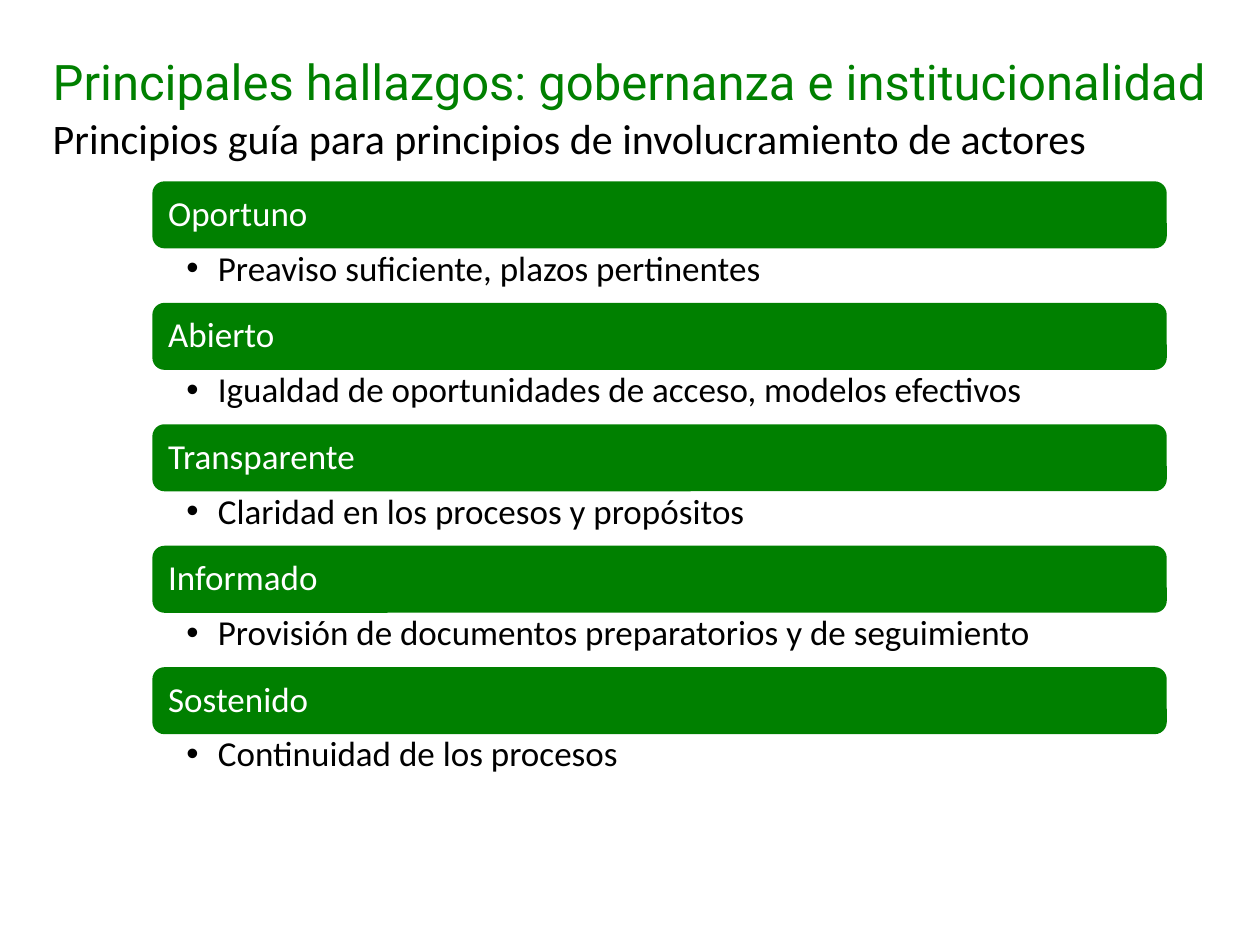
from dataclasses import dataclass
from pptx import Presentation as Deck
from pptx.dml.color import RGBColor as Rgb
from pptx.enum.shapes import MSO_SHAPE as Kind
from pptx.enum.text import MSO_ANCHOR as Anchor, MSO_AUTO_SIZE as Fit, PP_ALIGN as Align
from pptx.oxml.ns import qn
from pptx.util import Inches, Pt
from lxml.etree import SubElement as Sub


@dataclass(frozen=True)
class Theme:
    green: Rgb = Rgb(0, 128, 0)
    black: Rgb = Rgb(0, 0, 0)
    white: Rgb = Rgb(255, 255, 255)
    head: Pt = Pt(28)
    lead: Pt = Pt(24)
    body: Pt = Pt(20)
    edge: Pt = Pt(1.5)
    sans: str = "Calibri"
    show: str = "Roboto"


THEME = Theme()
WIDE, HIGH = 10, 7.5
TITLE = "Principales hallazgos: gobernanza e institucionalidad"
LEAD = "Principios guía para principios de involucramiento de actores"
ITEMS = [
    ("Oportuno", "Preaviso suficiente, plazos pertinentes"),
    ("Abierto", "Igualdad de oportunidades de acceso, modelos efectivos"),
    ("Transparente", "Claridad en los procesos y propósitos"),
    ("Informado", "Provisión de documentos preparatorios y de seguimiento"),
    ("Sostenido", "Continuidad de los procesos"),
]


def apply(obj, form):
    for key, val in form.items():
        setattr(obj, key, val)


def pads(left, top, right, low):
    keys = ("margin_left", "margin_top", "margin_right", "margin_bottom")
    return dict(zip(keys, map(Inches, (left, top, right, low))))


def write(shape, text, font, color, frame, para, dot=False):
    body = shape.text_frame
    apply(body, {"word_wrap": True, **frame})
    line = body.paragraphs[0]
    apply(line, {"alignment": Align.LEFT, **para})
    if dot:
        prop = line._p.get_or_add_pPr()
        prop.set("marL", str(Inches(0.25)))
        prop.set("indent", str(-Inches(0.25)))
        Sub(prop, qn("a:buFont")).set("typeface", "Arial")
        Sub(prop, qn("a:buChar")).set("char", "•")
    run = line.add_run()
    run.text = text
    apply(run.font, font)
    run.font.color.rgb = color


def header(slide, box):
    left, top, wide, high = box
    rows = [
        (TITLE, 0, 0.68, THEME.head, THEME.show, THEME.green, Fit.NONE),
        (LEAD, 0.49, 0.51, THEME.lead, THEME.sans, THEME.black, Fit.SHAPE_TO_FIT_TEXT),
    ]
    for text, start, share, size, name, color, fit in rows:
        area = map(Inches, (left, top + start * high, wide, share * high))
        part = slide.shapes.add_textbox(*area)
        write(part, text, {"size": size, "name": name}, color, {"auto_size": fit}, {})


def band(shapes, box, text):
    bar = shapes.add_shape(Kind.ROUNDED_RECTANGLE, *map(Inches, box))
    bar.shadow.inherit = False
    bar.fill.solid()
    bar.fill.fore_color.rgb = THEME.green
    bar.line.color.rgb = THEME.green
    bar.line.width = THEME.edge
    frame = {"vertical_anchor": Anchor.MIDDLE, **pads(0.09, 0.08, 0.08, 0.08)}
    write(bar, text, {"size": THEME.body, "name": THEME.sans}, THEME.white,
          frame, {"line_spacing": 0.9})


def detail(shapes, box, text):
    note = shapes.add_textbox(*map(Inches, box))
    write(note, text, {"size": THEME.body, "name": THEME.sans}, THEME.black,
          pads(0.26, 0.03, 0.19, 0.03), {"level": 1, "line_spacing": 0.9}, dot=True)


def listing(slide, box, items):
    left, top, wide, high = box
    step = high / len(items)
    bar = step * 0.53
    shapes = slide.shapes.add_group_shape().shapes
    for row, (name, text) in enumerate(items):
        y = top + row * step
        band(shapes, (left, y, wide, bar), name)
        detail(shapes, (left, y + bar, wide, step - bar), text)


def main():
    deck = Deck()
    apply(deck, {"slide_width": Inches(WIDE), "slide_height": Inches(HIGH)})
    slide = deck.slides.add_slide(deck.slide_layouts[6])
    header(slide, (0.32, 0.36, 9.45, 0.98))
    listing(slide, (1.22, 1.45, 8.03, 4.82), ITEMS)
    deck.save("out.pptx")


if __name__ == "__main__":
    main()
